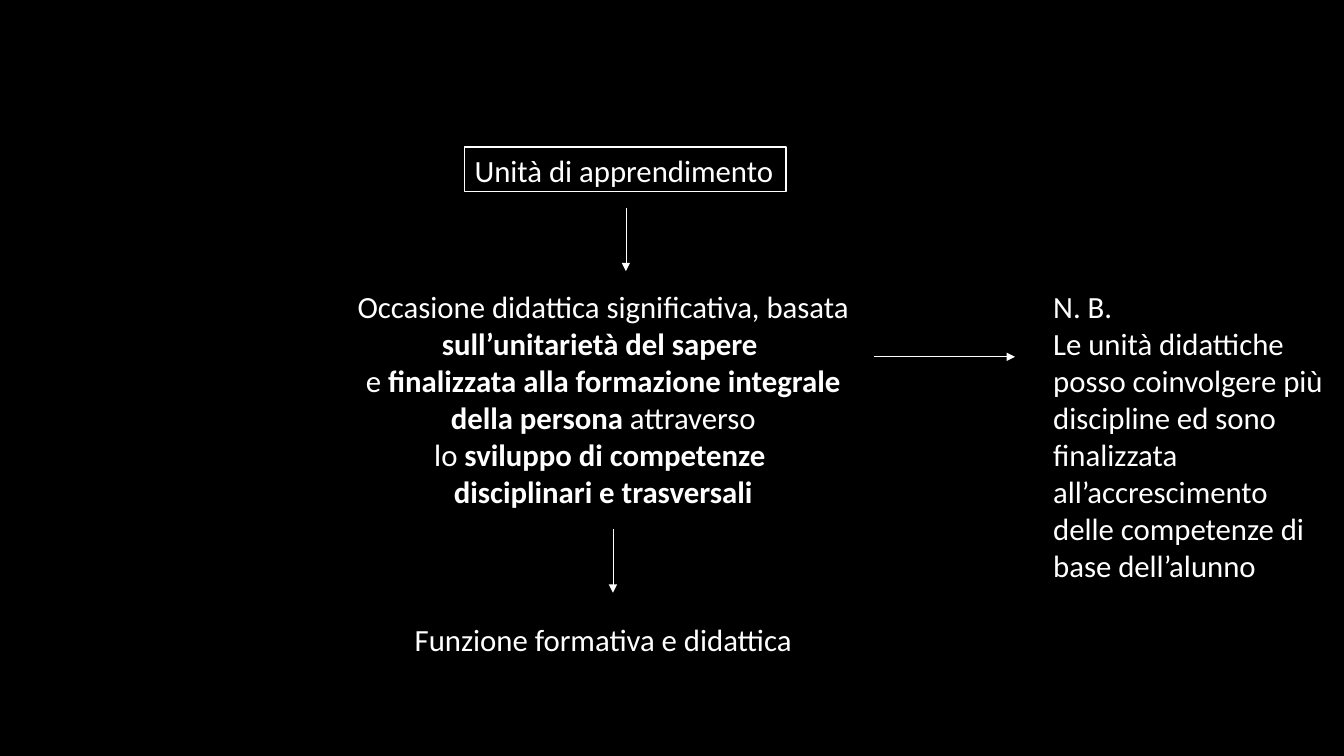
from lxml.etree import SubElement
from pptx import Presentation
from pptx.dml.color import RGBColor
from pptx.enum.shapes import MSO_CONNECTOR
from pptx.enum.text import PP_ALIGN
from pptx.oxml.ns import qn
from pptx.util import Pt

COLORS = {"background": "000000", "ink": "FFFFFF"}
INK = RGBColor.from_string(COLORS["ink"])


def add_text(slide, box, paragraphs, align=PP_ALIGN.LEFT, wrap=True):
    block = slide.shapes.add_textbox(*map(Pt, box))
    frame = block.text_frame
    frame.word_wrap = wrap
    for index, runs in enumerate(paragraphs):
        paragraph = frame.paragraphs[0] if index == 0 else frame.add_paragraph()
        paragraph.alignment = align
        paragraph.font.name = "Calibri"
        paragraph.font.size = Pt(22)
        paragraph.font.color.rgb = INK
        for text, bold in runs:
            run = paragraph.add_run()
            run.text = text
            run.font.bold = bold
    return block


def add_arrow(slide, x1, y1, x2, y2):
    arrow = slide.shapes.add_connector(
        MSO_CONNECTOR.STRAIGHT, Pt(x1), Pt(y1), Pt(x2), Pt(y2))
    arrow.line.color.rgb = INK
    arrow.line.width = Pt(0.5)
    SubElement(arrow.line._get_or_add_ln(), qn("a:tailEnd"), type="triangle")
    SubElement(arrow._element.spPr, qn("a:effectLst"))


prs = Presentation()
prs.slide_width, prs.slide_height = Pt(960), Pt(540)
slide = prs.slides.add_slide(prs.slide_layouts[6])
slide.background.fill.solid()
slide.background.fill.fore_color.rgb = RGBColor.from_string(COLORS["background"])

definition = add_text(slide, (237.6, 202.3, 386.6, 300.2), [
    [("Occasione didattica significativa, basata ", False),
     ("sull’unitarietà del sapere ", True)],
    [("e ", False), ("finalizzata alla formazione integrale", True)],
    [(" della persona ", True), ("attraverso ", False)],
    [("lo ", False), ("sviluppo di competenze ", True)],
    [("disciplinari e trasversali", True)],
    [("Funzione formativa e didattica", False)],
], PP_ALIGN.CENTER)
definition.text_frame.paragraphs[-1].space_before = Pt(79)

unit = add_text(slide, (331.9, 105.1, 229.7, 31.7),
                [[("Unità di apprendimento", False)]], wrap=False)
unit.line.color.rgb = INK
unit.line.width = Pt(1)

add_text(slide, (745.2, 202.3, 214.6, 220.3), [
    [("N. B.", False)],
    [("Le unità didattiche posso coinvolgere più discipline ed sono finalizzata "
      "all’accrescimento delle competenze di base dell’alunno", False)],
])

for ends in [(447.1, 148.3, 447.1, 193.7),
             (624.2, 254.9, 725, 254.9),
             (437.8, 378, 437.8, 423.4)]:
    add_arrow(slide, *ends)

prs.save("out.pptx")
